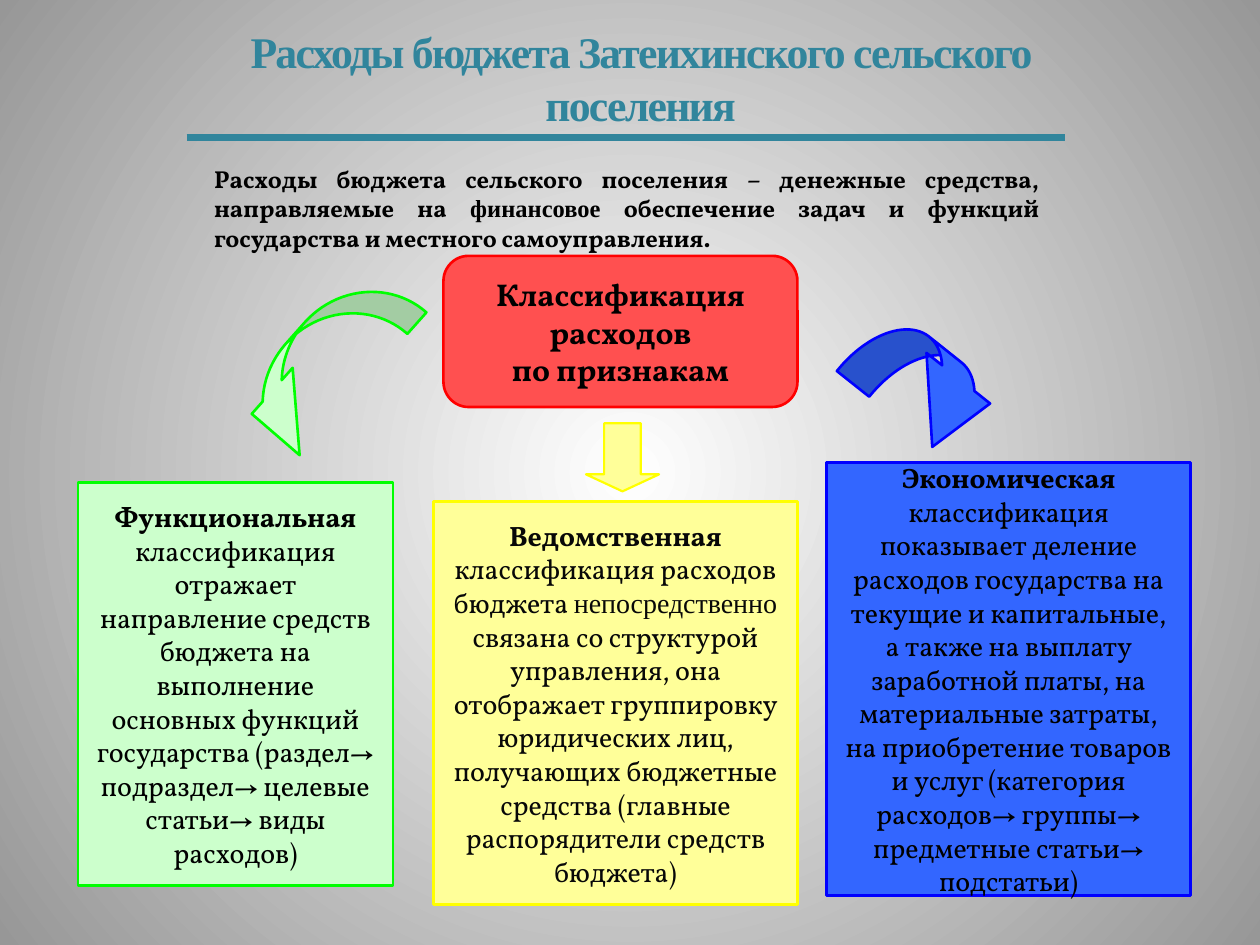
from lxml import etree
from pptx import Presentation
from pptx.dml.color import RGBColor
from pptx.enum.shapes import MSO_CONNECTOR, MSO_SHAPE
from pptx.enum.text import MSO_ANCHOR, PP_ALIGN
from pptx.oxml.ns import qn
from pptx.util import Pt

RECTANGLE, ROUNDED = MSO_SHAPE.RECTANGLE, MSO_SHAPE.ROUNDED_RECTANGLE
CURVED_UP, CURVED_DOWN = MSO_SHAPE.CURVED_UP_ARROW, MSO_SHAPE.CURVED_DOWN_ARROW
DOWN = MSO_SHAPE.DOWN_ARROW
STRAIGHT = MSO_CONNECTOR.STRAIGHT
CENTER, JUSTIFY = PP_ALIGN.CENTER, PP_ALIGN.JUSTIFY
TOP, MIDDLE, BOTTOM = MSO_ANCHOR.TOP, MSO_ANCHOR.MIDDLE, MSO_ANCHOR.BOTTOM

WHITE = RGBColor(0xFF, 0xFF, 0xFF)
GRAY = RGBColor(0x97, 0x97, 0x97)
TEAL = RGBColor(0x31, 0x85, 0x9C)
BLACK = RGBColor(0x00, 0x00, 0x00)
NEAR_BLACK = RGBColor(0x08, 0x08, 0x08)
# Pairs of fill and outline
RED = RGBColor(0xFF, 0x50, 0x50), RGBColor(0xFF, 0x00, 0x00)
GREEN = RGBColor(0xCC, 0xFF, 0xCC), RGBColor(0x00, 0xFF, 0x00)
YELLOW = RGBColor(0xFF, 0xFF, 0x99), RGBColor(0xFF, 0xFF, 0x00)
BLUE = RGBColor(0x33, 0x66, 0xFF), RGBColor(0x00, 0x00, 0xFF)

SERIF, BODY = "Times New Roman", "Vollkorn"

# Each run is (text, bold, font name)
FUNCTIONAL = [
    ("Функциональная ", True, BODY),
    ("классификация отражает направление средств бюджета на выполнение основных "
     "функций государства (раздел→ подраздел→ целевые статьи→ виды расходов)", False, BODY),
]
DEPARTMENTAL = [
    ("Ведомственная ", True, BODY),
    ("классификация расходов бюджета ", False, BODY),
    ("непосредственно", False, SERIF),
    (" связана со структурой управления, она отображает группировку юридических лиц, "
     "получающих бюджетные средства (главные распорядители средств бюджета)", False, BODY),
]
ECONOMIC = [
    ("Экономическая", True, BODY),
    (" классификация показывает деление расходов государства на текущие и капитальные, "
     "а также на выплату заработной платы, на материальные затраты, на приобретение "
     "товаров и услуг (категория расходов→ группы→ предметные статьи→ подстатьи)", False, BODY),
]
INTRO = [
    ("Расходы бюджета сельского поселения – денежные средства, направляемые на ", True, BODY),
    ("финансовое", True, SERIF),
    (" обеспечение задач и функций государства и местного самоуправления.", True, BODY),
]


def points(box):
    return [Pt(length) for length in box]


def write_text(shape, paragraphs, size, color=BLACK, align=CENTER, anchor=MIDDLE,
               margins=(7.2, 3.6)):
    frame = shape.text_frame
    frame.word_wrap = True
    frame.vertical_anchor = anchor
    frame.margin_left = frame.margin_right = Pt(margins[0])
    frame.margin_top = frame.margin_bottom = Pt(margins[1])
    for index, runs in enumerate(paragraphs):
        paragraph = frame.add_paragraph() if index else frame.paragraphs[0]
        paragraph.alignment = align
        paragraph.font.size = Pt(size)
        paragraph.font.color.rgb = color
        for text, bold, font_name in runs:
            run = paragraph.add_run()
            run.text = text
            run.font.bold = bold
            run.font.name = font_name


def add_filled_shape(slide, kind, box, colors, line_width=1.5):
    shape = slide.shapes.add_shape(kind, *points(box))
    shape.shadow.inherit = False
    shape.fill.solid()
    shape.fill.fore_color.rgb, shape.line.color.rgb = colors
    shape.line.width = Pt(line_width)
    return shape


def add_background(slide):
    fill = slide.background.fill
    fill.gradient()
    for stop, color in zip(fill.gradient_stops, (WHITE, GRAY)):
        stop.color.rgb = color
    # Turn the linear gradient into a circular one
    linear = next(slide.element.iter(qn("a:lin")))
    circle = etree.Element(qn("a:path"), {"path": "circle"})
    etree.SubElement(circle, qn("a:fillToRect"), dict.fromkeys("ltrb", "50000"))
    linear.getparent().replace(linear, circle)


def add_title(slide, box):
    title = slide.shapes.add_textbox(*points(box))
    write_text(title, [[("Расходы бюджета Затеихинского сельского поселения", True, SERIF)]],
               25, TEAL, anchor=BOTTOM)
    for run in title.text_frame.paragraphs[0].runs:
        run.font._element.set("spc", "-100")
    # Rule under the title
    left, top, width, height = box
    rule_top = top + height + 0.7
    rule = slide.shapes.add_connector(
        STRAIGHT, *points((left - 8.6, rule_top, left + width - 8.6, rule_top)))
    rule.line.color.rgb = TEAL
    rule.line.width = Pt(3.75)
    etree.SubElement(rule._element.spPr, qn("a:effectLst"))


def add_intro(slide, box):
    intro = slide.shapes.add_textbox(*points(box))
    write_text(intro, [INTRO], 14, align=JUSTIFY, anchor=TOP)


def add_heading(slide, box):
    heading = add_filled_shape(slide, ROUNDED, box, RED)
    lines = ("Классификация расходов", "по признакам")
    write_text(heading, [[(line, True, BODY)] for line in lines], 18, margins=(10, 3.6))


def add_category(slide, box, colors, runs, text_color=BLACK):
    category = add_filled_shape(slide, RECTANGLE, box, colors)
    write_text(category, [runs], 16, text_color, margins=(8.6, 0))


def add_arrow(slide, kind, box, colors, adjustments, rotation=0, line_width=1.5):
    arrow = add_filled_shape(slide, kind, box, colors, line_width)
    arrow.rotation = rotation
    for index, value in enumerate(adjustments):
        arrow.adjustments[index] = value


def main():
    presentation = Presentation()
    presentation.slide_width, presentation.slide_height = Pt(720), Pt(540)
    slide = presentation.slides.add_slide(presentation.slide_layouts[6])

    add_background(slide)
    add_title(slide, (115.2, 16.6, 501.8, 61.2))
    add_intro(slide, (115.2, 90, 486, 51.1))
    add_heading(slide, (253.4, 146.2, 202.3, 86.4))

    # Three classifications
    add_category(slide, (44.6, 275.8, 180, 230.4), GREEN, FUNCTIONAL)
    add_category(slide, (247.7, 286.6, 208.1, 230.4), YELLOW, DEPARTMENTAL, NEAR_BLACK)
    add_category(slide, (472.3, 264.2, 208.1, 247.7), BLUE, ECONOMIC)

    # Arrows from the heading to each classification
    add_arrow(slide, CURVED_UP, (120.2, 185.8, 126.7, 48.2), GREEN, (0.34, 0.73, 0.75), 131.6)
    add_arrow(slide, CURVED_DOWN, (483.1, 198, 92.9, 48.2), BLUE, (0.49, 0.99, 0.83), 38.5)
    add_arrow(slide, DOWN, (334.8, 241.9, 41.8, 38.9), YELLOW, (0.5, 0.25), line_width=1.25)

    presentation.save("out.pptx")


if __name__ == "__main__":
    main()
